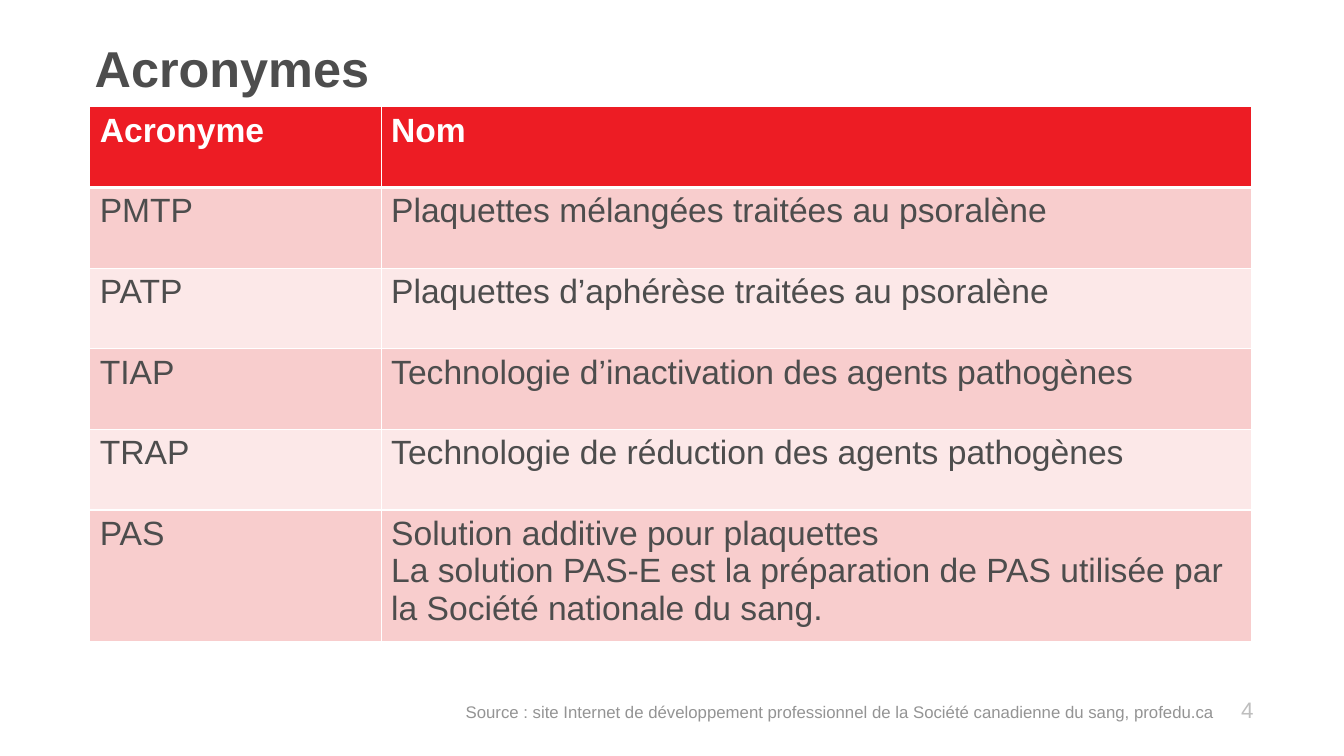
"""Build the slide that lists the acronyms and their meanings."""
from lxml import etree
from pptx import Presentation
from pptx import util as u
from pptx.dml.color import RGBColor
from pptx.enum import text as t
from pptx.oxml import ns

TITLE = "Acronymes"
ROWS = [
    ("Acronyme", "Nom"),
    ("PMTP", "Plaquettes mélangées traitées au psoralène"),
    ("PATP", "Plaquettes d’aphérèse traitées au psoralène"),
    ("TIAP", "Technologie d’inactivation des agents pathogènes"),
    ("TRAP", "Technologie de réduction des agents pathogènes"),
    ("PAS", "Solution additive pour plaquettes\nLa solution PAS-E est la "
            "préparation de PAS utilisée par la Société nationale du sang."),
]
SOURCE = ("Source : site Internet de développement professionnel de la "
          "Société canadienne du sang, profedu.ca")
PAGE = "4"

FONT = "Arial"
WHITE = RGBColor(0xFF, 0xFF, 0xFF)
RED = RGBColor(0xED, 0x1C, 0x24)
ROSE = RGBColor(0xF8, 0xCD, 0xCD)
PALE = RGBColor(0xFC, 0xE8, 0xE8)
DARK = RGBColor(0x4D, 0x4D, 0x4D)
GRAY = RGBColor(0x94, 0x94, 0x94)
LIGHT = RGBColor(0xBE, 0xBE, 0xBE)

WIDE, HIGH = 13.33, 7.5
LEFT, TOP = 0.89, 1.06
COLS = (2.89, 8.63)
ROW, LAST = 0.8, 0.85


def write(frame, words, size, color, bold=False, align=t.PP_ALIGN.LEFT,
          anchor=t.MSO_ANCHOR.TOP, space=None):
    frame.word_wrap = True
    frame.vertical_anchor = anchor
    frame.text = words
    for par in frame.paragraphs:
        par.alignment = align
        par.line_spacing = space
        for run in par.runs:
            font = run.font
            font.name, font.size, font.bold = FONT, u.Pt(size), bold
            font.color.rgb = color


def label(slide, words, box, **style):
    frame = slide.shapes.add_textbox(*map(u.Inches, box)).text_frame
    write(frame, words, **style)


def edge(cell, widths):
    props = cell._tc.get_or_add_tcPr()
    for spot, (side, width) in enumerate(widths.items()):
        line = etree.Element(ns.qn("a:ln" + side), w=str(u.Pt(width)))
        fill = etree.SubElement(line, ns.qn("a:solidFill"))
        etree.SubElement(fill, ns.qn("a:srgbClr"), val=str(WHITE))
        props.insert(spot, line)


def grid(slide):
    count = len(ROWS)
    tall = ROW * (count - 1) + LAST
    box = (LEFT, TOP, sum(COLS), tall)
    table = slide.shapes.add_table(count, len(COLS), *map(u.Inches, box)).table
    for col, width in zip(table.columns, COLS):
        col.width = u.Inches(width)
    for r, words in enumerate(ROWS):
        head = r == 0
        table.rows[r].height = u.Inches(LAST if r == count - 1 else ROW)
        for c, word in enumerate(words):
            cell = table.cell(r, c)
            cell.fill.solid()
            cell.fill.fore_color.rgb = RED if head else ROSE if r % 2 else PALE
            edge(cell, {"L": 1, "R": 1, "T": 3 if r == 1 else 1,
                        "B": 3 if head else 1})
            write(cell.text_frame, word, 24, WHITE if head else DARK, bold=head)


def main():
    deck = Presentation()
    deck.slide_width, deck.slide_height = u.Inches(WIDE), u.Inches(HIGH)
    slide = deck.slides.add_slide(deck.slide_layouts[6])
    label(slide, PAGE, (0.95, 6.62, 11.58, 0.88), size=16, color=LIGHT,
          align=t.PP_ALIGN.RIGHT, anchor=t.MSO_ANCHOR.MIDDLE, space=0.9)
    label(slide, TITLE, (0.84, 0, 11.58, 1.03), size=36, color=DARK,
          bold=True, anchor=t.MSO_ANCHOR.BOTTOM, space=0.9)
    grid(slide)
    label(slide, SOURCE, (4.52, 6.91, 8.36, 0.3), size=12, color=GRAY)
    deck.save("out.pptx")


if __name__ == "__main__":
    main()
